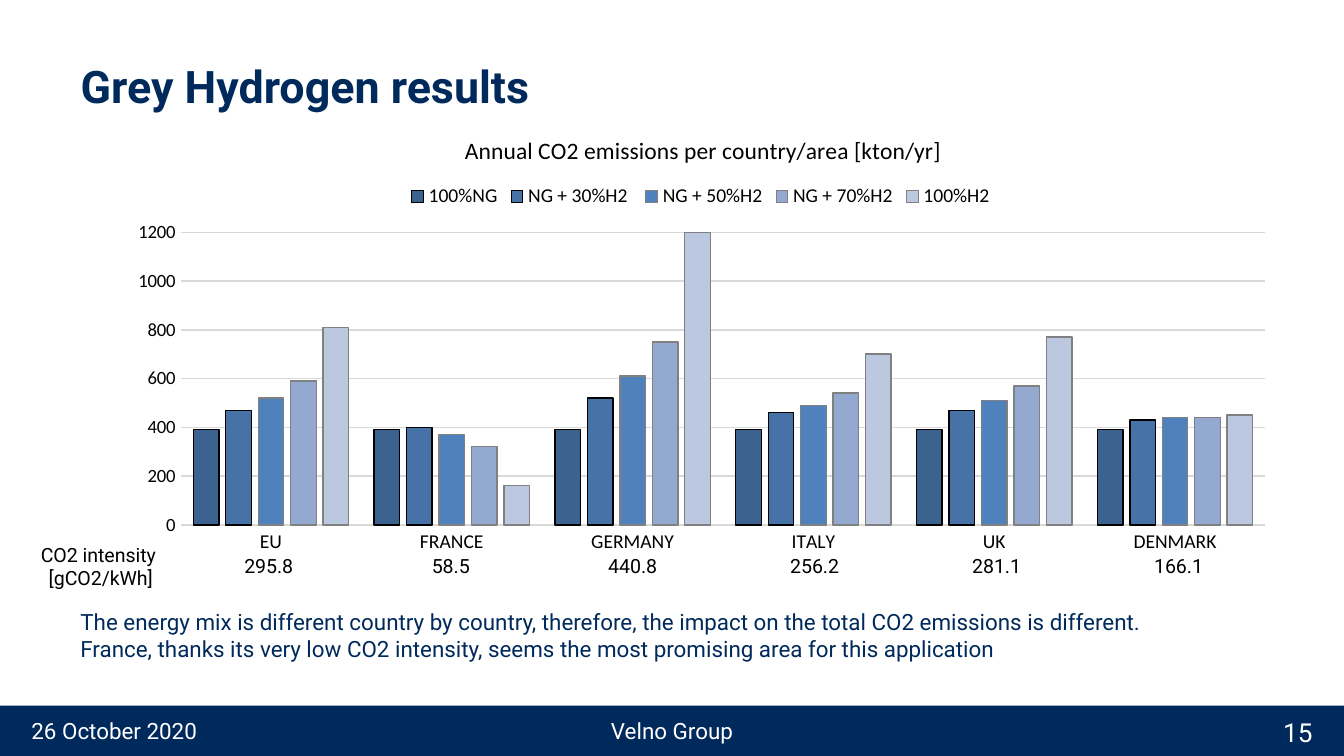
from dataclasses import dataclass

from lxml import etree
from pptx import Presentation
from pptx.chart.data import CategoryChartData
from pptx.dml.color import RGBColor
from pptx.enum.chart import XL_CHART_TYPE, XL_LEGEND_POSITION, XL_TICK_MARK
from pptx.enum.shapes import MSO_SHAPE
from pptx.enum.text import MSO_ANCHOR, PP_ALIGN
from pptx.oxml.ns import qn
from pptx.util import Pt

PX = 9525
LEFT, CENTER, RIGHT = PP_ALIGN.LEFT, PP_ALIGN.CENTER, PP_ALIGN.RIGHT
TOP, MIDDLE, BOTTOM = MSO_ANCHOR.TOP, MSO_ANCHOR.MIDDLE, MSO_ANCHOR.BOTTOM
NO_TICK = XL_TICK_MARK.NONE
COLUMNS, LEGEND_TOP = XL_CHART_TYPE.COLUMN_CLUSTERED, XL_LEGEND_POSITION.TOP
RECTANGLE = MSO_SHAPE.RECTANGLE
HEADING_FONT, CHART_FONT = "Roboto", "Calibri"
PLAIN_TABLE = "{2D5ABB26-0587-4C30-8999-92F81FD0307C}"
COLORS = {
    "navy": "002A5C",
    "white": "FFFFFF",
    "black": "000000",
    "grey": "808080",
    "grid": "D9D9D9",
    "ng": "3C628F",
    "h2_30": "4672A8",
    "h2_50": "4F81BD",
    "h2_70": "93A9CF",
    "h2": "BCC8DF",
}


@dataclass(frozen=True)
class Box:
    x: int
    y: int
    w: int
    h: int

    def emu(self) -> tuple[int, ...]:
        return tuple(v * PX for v in (self.x, self.y, self.w, self.h))


@dataclass(frozen=True)
class Label:
    lines: tuple[str, ...]
    box: Box
    size: float
    color: str
    align: PP_ALIGN = LEFT
    anchor: MSO_ANCHOR = MIDDLE


@dataclass(frozen=True)
class Blend:
    name: str
    emissions: tuple[int, ...]
    fill: str
    outline: str


CHART_BOX = Box(81, 79, 840, 324)
COUNTRIES = ("EU", "FRANCE", "GERMANY", "ITALY", "UK", "DENMARK")
INTENSITIES = ("295.8", "58.5", "440.8", "256.2", "281.1", "166.1")
BLENDS = (
    Blend("100%NG", (390, 390, 390, 390, 390, 390), "ng", "black"),
    Blend("NG + 30%H2 ", (470, 400, 520, 460, 470, 430), "h2_30", "black"),
    Blend("NG + 50%H2", (520, 370, 610, 490, 510, 440), "h2_50", "grey"),
    Blend("NG + 70%H2", (590, 320, 750, 540, 570, 440), "h2_70", "grey"),
    Blend("100%H2", (810, 160, 1200, 700, 770, 450), "h2", "grey"),
)
LABELS = (
    Label(("Velno Group",), Box(368, 504, 224, 36), 12, "white", CENTER),
    Label(("26 October 2020",), Box(13, 504, 346, 36), 12, "white"),
    Label(("15",), Box(704, 505, 243, 36), 14, "white", RIGHT),
    Label(
        (
            "The energy mix is different country by country, therefore, "
            "the impact on the total CO2 emissions is different.",
            "France, thanks its very low CO2 intensity, seems the most "
            "promising area for this application",
        ),
        Box(48, 430, 889, 48), 12, "navy", LEFT, TOP,
    ),
)


def rgb(name: str) -> RGBColor:
    return RGBColor.from_string(COLORS[name])


def style_font(font, size: float, color: str, family: str, bold: bool = False) -> None:
    font.size, font.name, font.bold = Pt(size), family, bold
    font.color.rgb = rgb(color)


def write_lines(frame, lines, size: float, color: str, align: PP_ALIGN,
                bold: bool = False) -> None:
    frame.text = "\n".join(lines)
    for paragraph in frame.paragraphs:
        paragraph.alignment = align
        style_font(paragraph.font, size, color, HEADING_FONT, bold)


def draw_label(slide, label: Label) -> None:
    frame = slide.shapes.add_textbox(*label.box.emu()).text_frame
    frame.word_wrap = True
    frame.vertical_anchor = label.anchor
    write_lines(frame, label.lines, label.size, label.color, label.align)


def draw_title(slide) -> None:
    title = slide.shapes.title
    title.left, title.top, title.width, title.height = Box(48, 37, 864, 74).emu()
    title.text_frame.vertical_anchor = TOP
    write_lines(title.text_frame, ("Grey Hydrogen results",), 24, "navy", LEFT, True)


def draw_footer(slide) -> None:
    band = slide.shapes.add_shape(RECTANGLE, *Box(0, 504, 960, 36).emu())
    band.shadow.inherit = False
    band.fill.solid()
    band.fill.fore_color.rgb = rgb("navy")
    band.line.fill.background()


def place(element, **position: int) -> None:
    for old in element.findall(qn("c:layout")):
        element.remove(old)
    layout = etree.Element(qn("c:layout"))
    manual = etree.SubElement(layout, qn("c:manualLayout"))
    if element.tag == qn("c:plotArea"):
        etree.SubElement(manual, qn("c:layoutTarget")).set("val", "inner")
    for axis in ("x", "y"):
        etree.SubElement(manual, qn(f"c:{axis}Mode")).set("val", "edge")
    for key, length in position.items():
        whole = CHART_BOX.w if key in ("x", "w") else CHART_BOX.h
        etree.SubElement(manual, qn(f"c:{key}")).set("val", str(length / whole))
    before = element.find(qn("c:tx"))
    if before is None:
        before = element.find(qn("c:legendPos"))
    if before is None:
        element.insert(0, layout)
    else:
        before.addnext(layout)


def draw_chart(slide) -> None:
    data = CategoryChartData()
    data.categories = COUNTRIES
    for blend in BLENDS:
        data.add_series(blend.name, blend.emissions)
    chart = slide.shapes.add_chart(COLUMNS, *CHART_BOX.emu(), data).chart
    style_font(chart.font, 10.5, "black", CHART_FONT)

    heading = chart.chart_title.text_frame
    heading.text = "Annual CO2 emissions per country/area [kton/yr]"
    style_font(heading.paragraphs[0].font, 12.6, "black", CHART_FONT)
    chart.chart_title.include_in_layout = False
    chart.has_legend = True
    chart.legend.position = LEGEND_TOP
    chart.legend.include_in_layout = False
    style_font(chart.legend.font, 10.5, "black", CHART_FONT)

    countries, emissions = chart.category_axis, chart.value_axis
    for axis, size in ((countries, 10.5), (emissions, 10)):
        axis.major_tick_mark = axis.minor_tick_mark = NO_TICK
        style_font(axis.tick_labels.font, size, "black", CHART_FONT)
    emissions.minimum_scale, emissions.maximum_scale = 0, 1200
    emissions.major_unit = 200
    emissions.format.line.fill.background()
    for line in (countries.format.line, emissions.major_gridlines.format.line):
        line.color.rgb = rgb("grid")
        line.width = Pt(0.75)

    plot = chart.plots[0]
    plot.gap_width, plot.overlap, plot.vary_by_categories = 100, -27, False
    for series, blend in zip(plot.series, BLENDS):
        series.format.fill.solid()
        series.format.fill.fore_color.rgb = rgb(blend.fill)
        series.format.line.color.rgb = rgb(blend.outline)
        series.format.line.width = Pt(0.75)

    root = chart.element.find(qn("c:chart"))
    place(root.find(qn("c:title")), x=248, y=14)
    place(root.find(qn("c:legend")), x=208, y=50, w=423, h=23)
    place(root.find(qn("c:plotArea")), x=48, y=87, w=775, h=209)


def draw_intensities(slide) -> None:
    columns = len(COUNTRIES) + 1
    frame = slide.shapes.add_table(2, columns, *Box(17, 369, 890, 53).emu())
    table = frame.table
    table.first_row = table.horz_banding = False
    next(frame.element.iter(qn("a:tableStyleId"))).text = PLAIN_TABLE
    for index, column in enumerate(table.columns):
        column.width = (130 if index else 110) * PX
    values = (("CO2 intensity ", "[gCO2/kWh]"), *((value,) for value in INTENSITIES))
    for row, contents in zip(table.rows, (((),) * columns, values)):
        row.height = 19 * PX
        for index, (cell, lines) in enumerate(zip(row.cells, contents)):
            cell.fill.background()
            cell.margin_left = cell.margin_right = 0
            cell.margin_top = cell.margin_bottom = 0
            cell.vertical_anchor = MIDDLE if index else BOTTOM
            write_lines(cell.text_frame, lines, 10.5, "black", CENTER)


def main() -> None:
    deck = Presentation()
    deck.slide_width, deck.slide_height = 960 * PX, 540 * PX
    slide = deck.slides.add_slide(deck.slide_layouts[5])
    draw_footer(slide)
    draw_title(slide)
    draw_chart(slide)
    for label in LABELS:
        draw_label(slide, label)
    draw_intensities(slide)
    deck.save("out.pptx")


if __name__ == "__main__":
    main()
